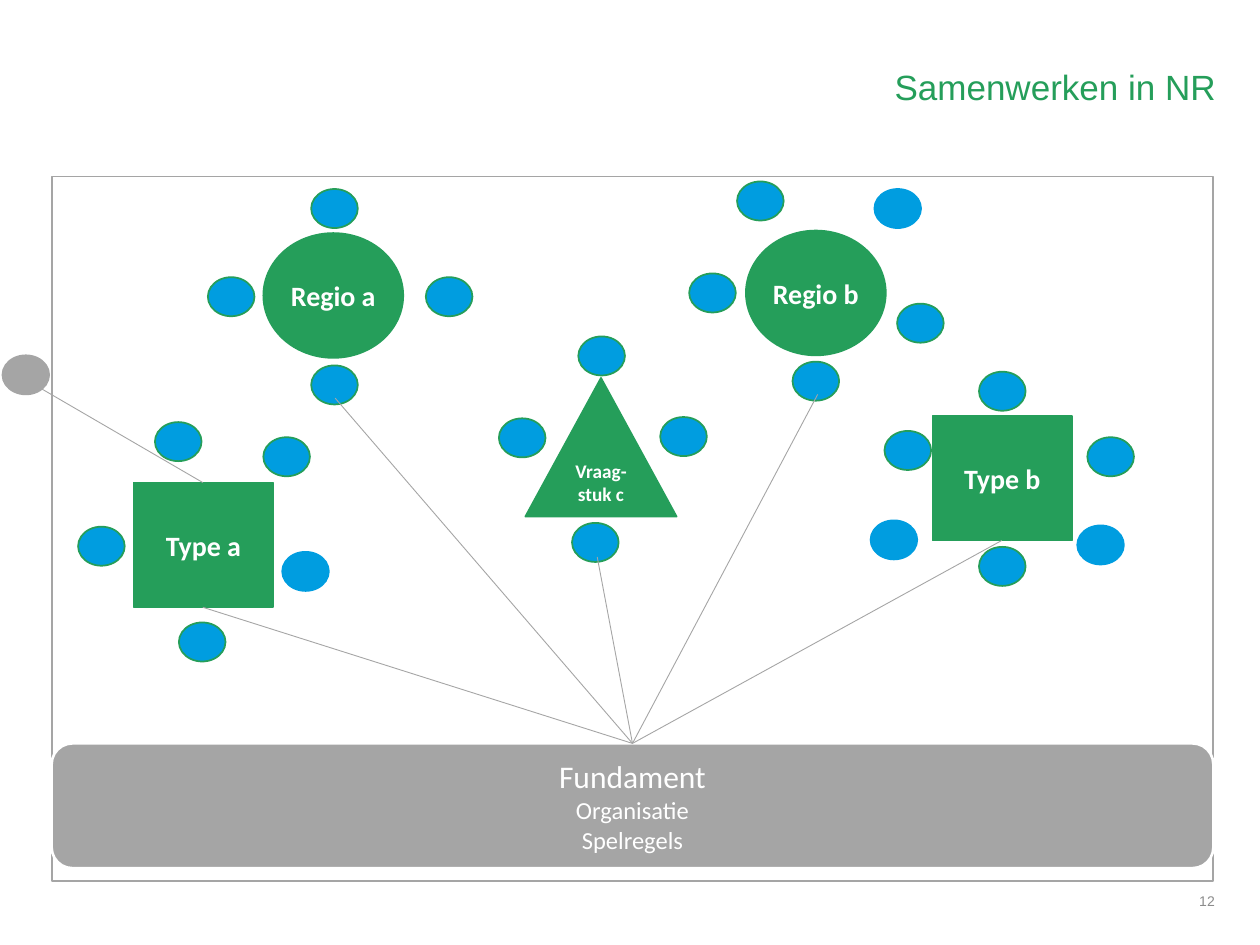
from dataclasses import dataclass
from typing import Any

import pptx
import pptx.dml.color
import pptx.enum.shapes
import pptx.enum.text
import pptx.oxml
import pptx.util

Inches = pptx.util.Inches
Kind = pptx.enum.shapes.MSO_SHAPE
Align = pptx.enum.text.PP_ALIGN
Anchor = pptx.enum.text.MSO_ANCHOR
Point = tuple[float, float]
Box = tuple[float, float, float, float]


@dataclass(frozen=True)
class Theme:
    green: str = "259E5A"
    blue: str = "009DE0"
    gray: str = "A5A5A5"
    white: str = "FFFFFF"
    faint: str = "8C8C8C"
    head: str = "Arial"
    body: str = "Calibri"
    title: float = 20
    base: float = 18
    hub: float = 16
    sub: float = 14
    small: float = 11
    page: float = 8


@dataclass(frozen=True)
class Hub:
    """A labelled centre with the dots grouped around it."""
    text: str
    kind: Any
    box: Box
    dots: list[Point]
    size: float
    inset: bool = False


THEME = Theme()
DOT = (0.37, 0.31)
ROOT = (5.02, 5.9)

HUBS = [
    Hub("Regio b", Kind.OVAL, (5.92, 1.83, 1.11, 0.99),
        [(5.85, 1.44), (7.12, 2.41), (6.29, 2.87), (5.47, 2.17)], THEME.hub),
    Hub("Type b", Kind.RECTANGLE, (7.4, 3.3, 1.11, 0.99),
        [(7.77, 2.95), (8.63, 3.47), (7.77, 4.34), (7.02, 3.42)], THEME.hub, True),
    Hub("Vraag-stuk c", Kind.ISOSCELES_TRIANGLE, (4.17, 3, 1.2, 1.1),
        [(4.59, 2.67), (5.24, 3.31), (4.54, 4.15), (3.96, 3.32)], THEME.small),
    Hub("Regio a", Kind.OVAL, (2.09, 1.85, 1.11, 0.99),
        [(2.47, 1.5), (3.38, 2.2), (2.47, 2.9), (1.65, 2.2)], THEME.hub),
    Hub("Type a", Kind.RECTANGLE, (1.06, 3.83, 1.11, 0.99),
        [(1.23, 3.35), (2.09, 3.47), (1.42, 4.94), (0.62, 4.18)], THEME.hub, True),
]
LOOSE = [(6.91, 4.13), (8.55, 4.17), (6.94, 1.5), (2.24, 4.38)]
ENDS = [(1.61, 4.82), (2.66, 3.16), (4.74, 4.42), (6.49, 3.13), (7.95, 4.29)]


def paint(code: str) -> pptx.dml.color.RGBColor:
    return pptx.dml.color.RGBColor.from_string(code)


def apply(target: Any, form: dict[str, Any]) -> None:
    for name, value in form.items():
        setattr(target, name, value)


def draw(shapes: Any, kind: Any, box: Box, fill: str, line: str,
         width: float = 1) -> Any:
    shape = shapes.add_shape(kind, *map(Inches, box))
    shape.shadow.inherit = False
    shape.fill.solid()
    shape.fill.fore_color.rgb = paint(fill)
    shape.line.color.rgb = paint(line)
    shape.line.width = pptx.util.Pt(width)
    return shape


def write(shape: Any, rows: list[tuple[str, float]], font: str, color: str,
          align: Any = Align.CENTER, anchor: Any = Anchor.MIDDLE,
          bold: bool = False, inset: bool = True, space: float = 1) -> None:
    frame = shape.text_frame
    apply(frame, {"word_wrap": True, "vertical_anchor": anchor})
    if not inset:
        apply(frame, {f"margin_{side}": 0
                      for side in ("left", "top", "right", "bottom")})
    for index, (text, size) in enumerate(rows):
        para = frame.add_paragraph() if index else frame.paragraphs[0]
        apply(para, {"alignment": align, "line_spacing": space})
        run = para.add_run()
        run.text = text
        apply(run.font, {"name": font, "size": pptx.util.Pt(size), "bold": bold})
        run.font.color.rgb = paint(color)


def add_dot(shapes: Any, spot: Point, fill: str, line: str) -> None:
    draw(shapes, Kind.OVAL, (*spot, *DOT), fill, line)


def add_hub(shapes: Any, hub: Hub) -> None:
    group = shapes.add_group_shape().shapes
    shape = draw(group, hub.kind, hub.box, THEME.green, THEME.green)
    write(shape, [(hub.text, hub.size)], THEME.body, THEME.white,
          bold=True, inset=hub.inset)
    for spot in hub.dots:
        add_dot(group, spot, THEME.blue, THEME.green)


def add_line(shapes: Any, start: Point, end: Point) -> None:
    line = shapes.add_connector(pptx.enum.shapes.MSO_CONNECTOR.STRAIGHT,
                                *map(Inches, (*start, *end)))
    line.line.color.rgb = paint(THEME.gray)
    line.line.width = pptx.util.Pt(0.5)
    props = line._element.spPr
    props.append(pptx.oxml.parse_xml(
        '<a:effectLst xmlns:a="http://schemas.openxmlformats.org/drawingml/2006/main"/>'))


def add_text(shapes: Any, box: Box, text: str, size: float, color: str,
             anchor: Any, space: float = 1) -> None:
    shape = shapes.add_textbox(*map(Inches, box))
    write(shape, [(text, size)], THEME.head, color, Align.RIGHT, anchor,
          space=space)


def main() -> None:
    deck = pptx.Presentation()
    apply(deck, {"slide_width": Inches(10), "slide_height": Inches(7.5)})
    shapes = deck.slides.add_slide(deck.slide_layouts[6]).shapes

    draw(shapes, Kind.RECTANGLE, (0.41, 1.4, 9.22, 5.59), THEME.white, THEME.gray)
    add_text(shapes, (3.41, 0.51, 6.34, 1.34), "Samenwerken in NR",
             THEME.title, THEME.green, Anchor.TOP, 0.9)
    base = draw(shapes, Kind.ROUNDED_RECTANGLE, (0.41, 5.9, 9.22, 0.99),
                THEME.gray, THEME.white, 1.5)
    write(base, [("Fundament", THEME.base), ("Organisatie", THEME.sub),
                 ("Spelregels", THEME.sub)], THEME.body, THEME.white)

    for hub in HUBS:
        add_hub(shapes, hub)
    for spot in LOOSE:
        add_dot(shapes, spot, THEME.blue, THEME.blue)
    for end in ENDS:
        add_line(shapes, ROOT, end)
    add_dot(shapes, (0.02, 2.82), THEME.gray, THEME.gray)
    add_line(shapes, (0.32, 3.08), (1.61, 3.83))
    add_text(shapes, (7.06, 6.95, 2.68, 0.4), "12", THEME.page, THEME.faint,
             Anchor.MIDDLE)
    deck.save("out.pptx")


if __name__ == "__main__":
    main()
